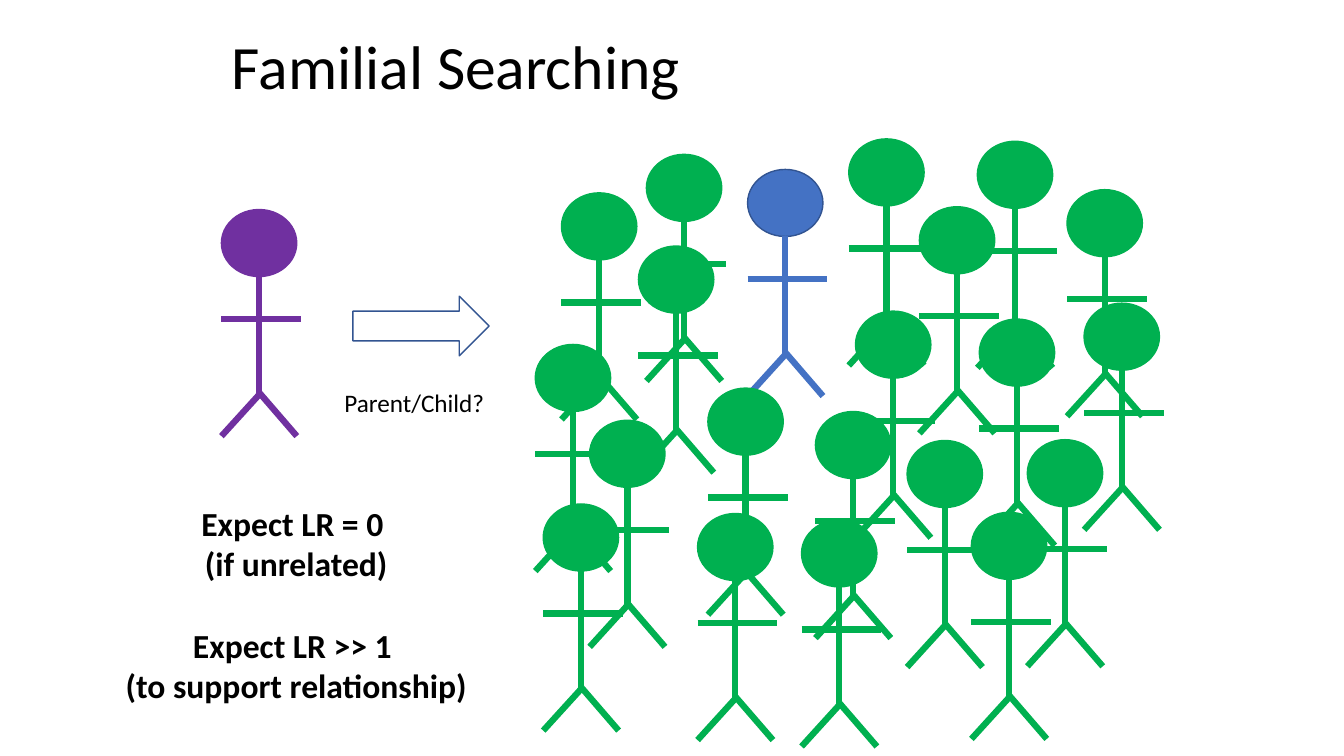
from dataclasses import dataclass

from lxml import etree
from pptx import Presentation
from pptx.dml.color import RGBColor
from pptx.enum.shapes import MSO_CONNECTOR, MSO_SHAPE
from pptx.enum.text import MSO_ANCHOR, MSO_AUTO_SIZE, PP_ALIGN
from pptx.oxml.ns import qn
from pptx.util import Cm, Pt

STRAIGHT = MSO_CONNECTOR.STRAIGHT
ELLIPSE, DOWN_ARROW = MSO_SHAPE.OVAL, MSO_SHAPE.DOWN_ARROW
LEFT, CENTER = PP_ALIGN.LEFT, PP_ALIGN.CENTER
MIDDLE = MSO_ANCHOR.MIDDLE
NO_FIT, GROW = MSO_AUTO_SIZE.NONE, MSO_AUTO_SIZE.SHAPE_TO_FIT_TEXT

BLACK = RGBColor(0x00, 0x00, 0x00)
BLUE = RGBColor(0x44, 0x72, 0xC4)
DARK_BLUE = RGBColor(0x32, 0x54, 0x91)
PURPLE = RGBColor(0x70, 0x30, 0xA0)
GREEN = RGBColor(0x00, 0xB0, 0x50)
FONT = "Calibri"

HEAD_W, HEAD_H = 1.9, 1.69
LIMBS = (
    (0.95, 1.69, 0.95, 4.66),
    (0, 2.76, 2.01, 2.76),
    (0, 5.71, 1.0, 4.61),
    (1.9, 5.71, 0.95, 4.61),
)


@dataclass(frozen=True)
class Person:
    x: float
    y: float
    color: RGBColor = GREEN
    outline: RGBColor = GREEN


RELATIVE = Person(18.84, 4.27, BLUE, DARK_BLUE)
SUSPECT = Person(5.58, 5.28, PURPLE, PURPLE)
CROWD = [
    Person(14.86, 10.59), Person(21.39, 3.5), Person(13.49, 8.68),
    Person(20.55, 10.37), Person(14.15, 4.86), Person(17.84, 9.78),
    Person(22.86, 11.1), Person(16.09, 6.2), Person(17.58, 12.94),
    Person(20.2, 13.1), Person(13.69, 12.7), Person(24.63, 3.56),
    Person(24.48, 12.91), Person(25.89, 11.08), Person(27.32, 7.64),
    Person(24.68, 8.04), Person(21.56, 7.84), Person(26.89, 4.78),
    Person(23.17, 5.21), Person(16.29, 3.89),
]


def draw_person(shapes, person: Person) -> None:
    head = shapes.add_shape(ELLIPSE, Cm(person.x), Cm(person.y), Cm(HEAD_W), Cm(HEAD_H))
    head.shadow.inherit = False
    head.fill.solid()
    head.fill.fore_color.rgb = person.color
    head.line.color.rgb = person.outline
    head.line.width = Pt(1)
    for x1, y1, x2, y2 in LIMBS:
        limb = shapes.add_connector(
            STRAIGHT, Cm(person.x + x1), Cm(person.y + y1),
            Cm(person.x + x2), Cm(person.y + y2))
        limb.line.color.rgb = person.color
        limb.line.width = Pt(4.5)
        etree.SubElement(limb._element.spPr, qn("a:effectLst"))


def write(p, text: str, *, size: float, bold: bool = False,
          align: PP_ALIGN = LEFT, before: float = 0) -> None:
    p.alignment = align
    p.space_before = Pt(before)
    r = p.add_run()
    r.text = text
    r.font.name = FONT
    r.font.size = Pt(size)
    r.font.bold = bold
    r.font.color.rgb = BLACK


def add_text_box(s, x: float, y: float, w: float, h: float):
    tf = s.shapes.add_textbox(Cm(x), Cm(y), Cm(w), Cm(h)).text_frame
    tf.word_wrap = False
    tf.auto_size = GROW
    return tf


def add_title(s, text: str) -> None:
    sp = s.shapes.title
    sp.left, sp.top, sp.width, sp.height = Cm(5.59), Cm(0.15), Cm(22.86), Cm(3.18)
    tf = sp.text_frame
    tf.auto_size = NO_FIT
    tf.vertical_anchor = MIDDLE
    p = tf.paragraphs[0]
    p.line_spacing = 0.9
    write(p, text, size=44)


def add_arrow(s) -> None:
    sp = s.shapes.add_shape(DOWN_ARROW, Cm(9.86), Cm(6.5), Cm(1.5), Cm(3.43))
    sp.rotation = 270
    sp.shadow.inherit = False
    sp.fill.background()
    sp.line.color.rgb = DARK_BLUE
    sp.line.width = Pt(1)


def add_expectations(s) -> None:
    tf = add_text_box(s, 2.87, 12.55, 9.19, 5.38)
    lines = (
        ("Expect LR = 0 ", 0),
        ("(if unrelated)", 0),
        ("Expect LR >> 1 ", 29.3),
        ("(to support relationship)", 0),
    )
    for i, (text, before) in enumerate(lines):
        p = tf.add_paragraph() if i else tf.paragraphs[0]
        write(p, text, size=24, bold=True, align=CENTER, before=before)


def main() -> None:
    prs = Presentation()
    prs.slide_width, prs.slide_height = Cm(33.87), Cm(19.05)
    s = prs.slides.add_slide(prs.slide_layouts[5])
    add_title(s, "Familial Searching")
    for person in (RELATIVE, SUSPECT, *CROWD):
        draw_person(s.shapes.add_group_shape().shapes, person)
    add_arrow(s)
    tf = add_text_box(s, 8.43, 9.63, 4.09, 1.02)
    write(tf.paragraphs[0], "Parent/Child?", size=18)
    add_expectations(s)
    prs.save("out.pptx")


if __name__ == "__main__":
    main()
